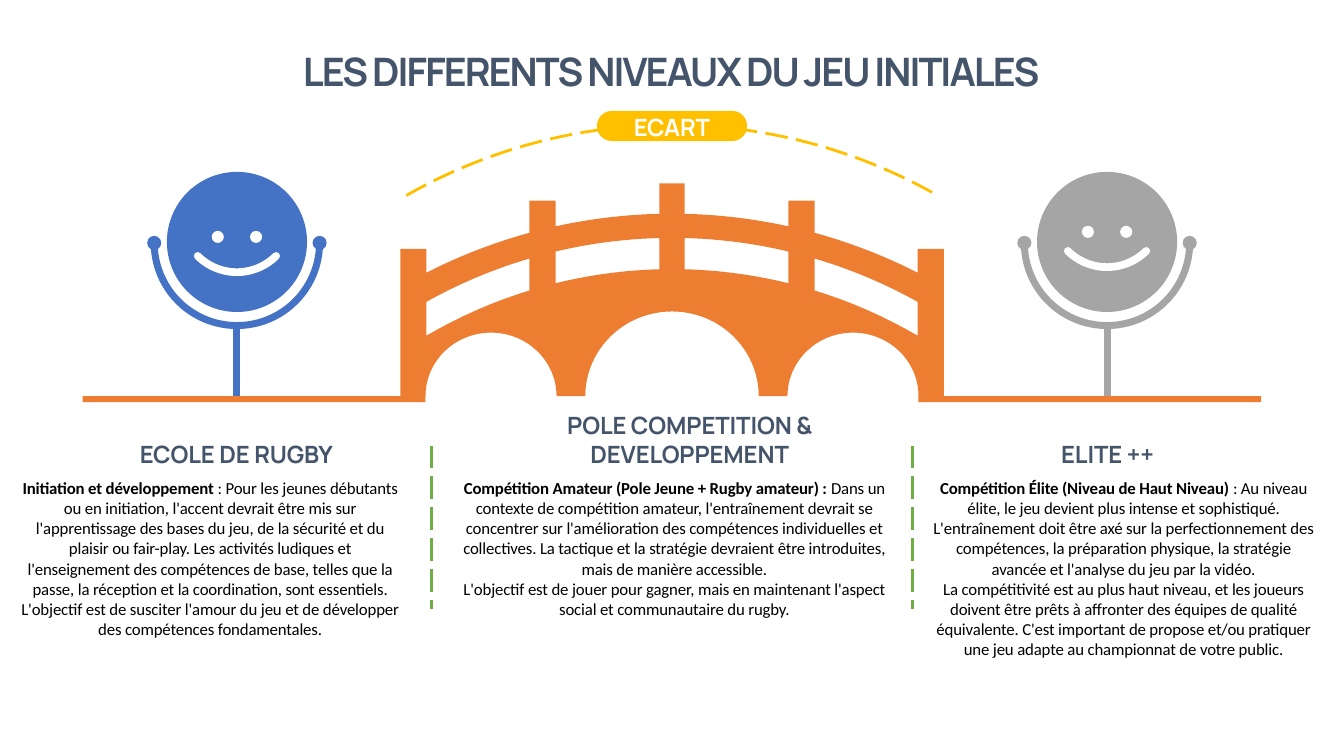
import math

from lxml import etree
from pptx import Presentation
from pptx.dml.color import RGBColor
from pptx.enum import dml, shapes, text
from pptx.oxml import ns
from pptx.util import Inches, Pt

BLUE, GREY, ORANGE = "4472C4", "A5A5A5", "ED7D31"
YELLOW, GREEN, SLATE = "FFC000", "70AD47", "44546A"
WHITE, BLACK = "FFFFFF", "000000"
CENTRE = 6.665
GROUND = 3.93
POSTS = [(3.97, 4.23, 2.47), (5.25, 5.51, 1.99), (6.54, 6.79, 1.82),
         (7.82, 8.08, 1.99), (9.1, 9.36, 2.47)]
ARCHES = [(8.46, 0.65, 0.63), (CENTRE, 0.86, 0.84), (4.87, 0.65, 0.63)]

LEVELS = [
    ("ECOLE DE RUGBY", (1.19, 4.3, 2.31, 0.39), (0.08, 4.69, 4.01, 1.95), [
        [("Initiation et développement ", True),
         (": Pour les jeunes débutants ou en initiation, l'accent devrait être mis sur "
          "l'apprentissage des bases du jeu, de la sécurité et du plaisir ou fair-play. "
          "Les activités ludiques et l'enseignement des compétences de base, telles que "
          "la passe, la réception et la coordination, sont essentiels. L'objectif est de "
          "susciter l'amour du jeu et de développer des compétences fondamentales.", False)],
    ]),
    ("POLE COMPETITION & DEVELOPPEMENT", (5.02, 3.99, 3.64, 0.7), (4.46, 4.69, 4.46, 1.75), [
        [("Compétition Amateur (Pole Jeune + Rugby amateur) :", True),
         (" Dans un contexte de compétition amateur, l'entraînement devrait se concentrer "
          "sur l'amélioration des compétences individuelles et collectives. La tactique et "
          "la stratégie devraient être introduites, mais de manière accessible.", False)],
        [("L'objectif est de jouer pour gagner, mais en maintenant l'aspect social et "
          "communautaire du rugby.", False)],
    ]),
    ("ELITE ++", (9.83, 4.3, 2.31, 0.39), (9.11, 4.69, 4.07, 2.16), [
        [("Compétition Élite (Niveau de Haut Niveau) ", True),
         (": Au niveau élite, le jeu devient plus intense et sophistiqué. L'entraînement "
          "doit être axé sur la perfectionnement des compétences, la préparation physique, "
          "la stratégie avancée et l'analyse du jeu par la vidéo.", False)],
        [("La compétitivité est au plus haut niveau, et les joueurs doivent être prêts à "
          "affronter des équipes de qualité équivalente. C'est important de propose et/ou "
          "pratiquer une jeu adapte au championnat de votre public.", False)],
    ]),
]


def color(value):
    return RGBColor.from_string(value)


def paint(shape, value):
    shape.shadow.inherit = False
    shape.fill.solid()
    shape.fill.fore_color.rgb = color(value)
    shape.line.fill.background()


def stroke(line, value, width, dashed=False):
    line.color.rgb = color(value)
    line.width = Pt(width)
    if dashed:
        line.dash_style = dml.MSO_LINE.LONG_DASH


def add_solid(page, kind, area, value):
    shape = page.shapes.add_shape(kind, *map(Inches, area))
    paint(shape, value)
    return shape


def add_dot(page, x, y, radius, value):
    area = (x - radius, y - radius, 2 * radius, 2 * radius)
    add_solid(page, shapes.MSO_SHAPE.OVAL, area, value)


def add_line(page, x, top, bottom, value, width, dashed=False):
    line = page.shapes.add_connector(
        shapes.MSO_CONNECTOR.STRAIGHT, Inches(x), Inches(top), Inches(x), Inches(bottom))
    stroke(line.line, value, width, dashed)
    etree.SubElement(line._element.spPr, ns.qn("a:effectLst"))


def add_outline(page, contours, closed):
    contours = [[(Inches(x), Inches(y)) for x, y in points] for points in contours]
    builder = page.shapes.build_freeform(*contours[0][0], scale=1.0)
    for index, points in enumerate(contours):
        if index:
            builder.move_to(*points[0])
        builder.add_line_segments(points[1:], close=closed)
    return builder.convert_to_shape()


def add_curve(page, points, value, width, dashed=False, rounded=False):
    curve = add_outline(page, [points], False)
    curve.shadow.inherit = False
    curve.fill.background()
    stroke(curve.line, value, width, dashed)
    if rounded:
        curve.line._get_or_add_ln().set("cap", "rnd")


def arc(x, y, across, down, start, end, steps=48):
    angles = [math.radians(start + (end - start) * step / steps) for step in range(steps + 1)]
    return [(x + across * math.cos(angle), y + down * math.sin(angle)) for angle in angles]


def crown(left, right, apex, radius, steps=24):
    xs = [left + (right - left) * step / steps for step in range(steps + 1)]
    return [(x, apex + radius - math.sqrt(radius ** 2 - (x - CENTRE) ** 2)) for x in xs]


def add_bridge(page):
    outline = [(POSTS[0][0], GROUND)]
    openings = []
    for index, (left, right, top) in enumerate(POSTS):
        outline += [(left, top), (right, top)]
        if index + 1 < len(POSTS):
            following = POSTS[index + 1][0]
            outline += crown(right, following, 2.12, 5.36)
            openings.append(crown(right, following, 2.36, 4.99)
                            + crown(following, right, 2.67, 4.82))
    outline.append((POSTS[-1][1], GROUND))
    for x, across, height in ARCHES:
        outline += arc(x, GROUND, across, height, 0, -180)
    paint(add_outline(page, [outline] + openings, True), ORANGE)
    for left in (0.82, 9.11):
        add_solid(page, shapes.MSO_SHAPE.RECTANGLE, (left, GROUND, 3.4, 0.06), ORANGE)


def add_figure(page, x, smile_top, value):
    add_dot(page, x, 2.4, 0.695, value)
    add_curve(page, arc(x, 2.41, 0.82, 0.82, 0, 180), value, 5)
    for side in (-1, 1):
        add_dot(page, x + side * 0.82, 2.41, 0.07, value)
        add_dot(page, x + side * 0.19, smile_top + 0.06, 0.06, WHITE)
    add_curve(page, arc(x, smile_top - 0.14, 0.55, 0.55, 45, 135), WHITE, 5.5, rounded=True)
    add_line(page, x, 3.23, GROUND, value, 5)


def write(frame, paragraphs, font, size, value, spacing):
    for index, spans in enumerate(paragraphs):
        para = frame.add_paragraph() if index else frame.paragraphs[0]
        para.alignment = text.PP_ALIGN.CENTER
        for words, bold in spans:
            span = para.add_run()
            span.text = words
            span.font.name = font
            span.font.size = Pt(size)
            span.font.bold = bold
            span.font.color.rgb = color(value)
            span._r.get_or_add_rPr().set("spc", str(spacing))


def add_text(page, area, paragraphs, font, size, value, spacing, anchor):
    frame = page.shapes.add_textbox(*map(Inches, area)).text_frame
    frame.word_wrap = True
    frame.auto_size = text.MSO_AUTO_SIZE.SHAPE_TO_FIT_TEXT
    frame.vertical_anchor = anchor
    write(frame, paragraphs, font, size, value, spacing)


def add_heading(page, area, words, size=17, spacing=-10):
    add_text(page, area, [[(words, True)]], "Manrope", size, SLATE, spacing,
             text.MSO_ANCHOR.BOTTOM)


def add_gap(page):
    add_curve(page, crown(4.03, 9.3, 1.24, 5.31, 48), YELLOW, 2, dashed=True)
    badge = add_solid(page, shapes.MSO_SHAPE.ROUNDED_RECTANGLE, (5.92, 1.1, 1.49, 0.3), YELLOW)
    badge.adjustments[0] = 0.5
    frame = badge.text_frame
    frame.margin_top = Inches(0.03)
    frame.margin_bottom = 0
    frame.vertical_anchor = text.MSO_ANCHOR.MIDDLE
    write(frame, [[("ECART", True)]], "Manrope", 17, WHITE, -10)


def main():
    deck = Presentation()
    deck.slide_width = Inches(13.33)
    deck.slide_height = Inches(7.5)
    page = deck.slides.add_slide(deck.slide_layouts[6])
    add_gap(page)
    add_bridge(page)
    add_figure(page, 2.35, 2.29, BLUE)
    add_figure(page, 10.98, 2.24, GREY)
    for x in (4.28, 9.05):
        add_line(page, x, 4.42, 6.04, GREEN, 2, dashed=True)
    add_heading(page, (0.82, 0.42, 11.67, 0.57), "LES DIFFERENTS NIVEAUX DU JEU INITIALES", 28, -140)
    for title, heading_area, body_area, paragraphs in LEVELS:
        add_heading(page, heading_area, title)
        add_text(page, body_area, paragraphs, "Calibri", 12, BLACK, -10, text.MSO_ANCHOR.TOP)
    deck.save("out.pptx")


if __name__ == "__main__":
    main()
